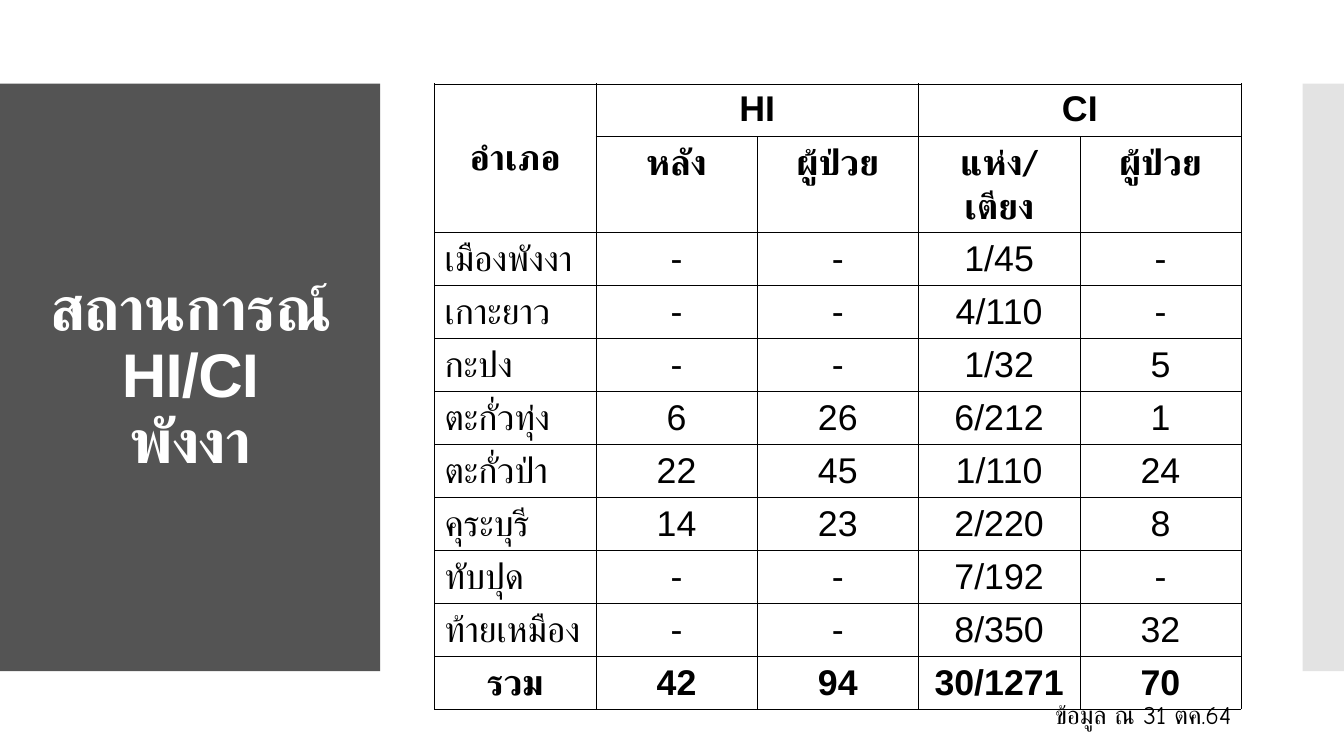
from lxml import etree
from pptx import Presentation
from pptx.dml.color import RGBColor
from pptx.enum import shapes, text
from pptx.oxml import ns
from pptx.util import Inches, Pt

# Content
TITLE = "สถานการณ์ HI/CI\vพังงา"
NOTE = "ข้อมูล ณ 31 ตค.64"
HEADS = [
    ("อำเภอ", "HI", "", "CI", ""),
    ("", "หลัง", "ผู้ป่วย", "แห่ง/เตียง", "ผู้ป่วย"),
]
AREAS = [
    ("เมืองพังงา", "-", "-", "1/45", "-"),
    ("เกาะยาว", "-", "-", "4/110", "-"),
    ("กะปง", "-", "-", "1/32", "5"),
    ("ตะกั่วทุ่ง", "6", "26", "6/212", "1"),
    ("ตะกั่วป่า", "22", "45", "1/110", "24"),
    ("คุระบุรี", "14", "23", "2/220", "8"),
    ("ทับปุด", "-", "-", "7/192", "-"),
    ("ท้ายเหมือง", "-", "-", "8/350", "32"),
]
TOTAL = ("รวม", "42", "94", "30/1271", "70")
MERGES = [((0, 0), (1, 0)), ((0, 1), (0, 2)), ((0, 3), (0, 4))]

THEME = {
    "panel": "545454", "strip": "C8C8C8", "ink": "000000", "white": "FFFFFF",
    "latin": "Arial", "thai": "Calibri", "note": "Comic Neue",
    "title_pt": 44, "cell_pt": 25.5, "note_pt": 18, "line_pt": 0.25,
}
LEFT, MID, RIGHT = text.PP_ALIGN.LEFT, text.PP_ALIGN.CENTER, text.PP_ALIGN.RIGHT
TOP, CENTER = text.MSO_ANCHOR.TOP, text.MSO_ANCHOR.MIDDLE


def box(*at):
    return [Inches(n) for n in at]


def color(name):
    return RGBColor.from_string(THEME[name])


def panel(slide, at, fill):
    shape = slide.shapes.add_shape(shapes.MSO_SHAPE.RECTANGLE, *box(*at))
    shape.shadow.inherit = False
    shape.fill.solid()
    shape.fill.fore_color.rgb = color(fill)
    shape.line.fill.background()
    return shape


def write(frame, words, face, size, ink="ink", bold=False, align=MID):
    frame.word_wrap = True
    para = frame.paragraphs[0]
    para.text = words
    para.alignment = align
    for run in para.runs:
        look = {"name": THEME[face], "size": Pt(THEME[size]), "bold": bold}
        for key, value in look.items():
            setattr(run.font, key, value)
        run.font.color.rgb = color(ink)
        # Thai letters take the complex-script face
        tag = etree.SubElement(run.font._element, ns.qn("a:cs"))
        tag.set("typeface", THEME[face])
    return para


def border(cell):
    props = cell._tc.get_or_add_tcPr()
    for i, side in enumerate(("lnL", "lnR", "lnT", "lnB")):
        line = etree.Element(ns.qn("a:" + side), w=str(Pt(THEME["line_pt"])))
        fill = etree.SubElement(line, ns.qn("a:solidFill"))
        etree.SubElement(fill, ns.qn("a:srgbClr"), val=THEME["ink"])
        props.insert(i, line)


def main():
    deck = Presentation()
    deck.slide_width, deck.slide_height = box(13.33, 7.5)
    slide = deck.slides.add_slide(deck.slide_layouts[6])

    # Side panels
    panel(slide, (0, 0.83, 3.77, 5.83), "panel")
    strip = panel(slide, (12.92, 0.83, 0.41, 5.83), "strip")
    tint = strip._element.spPr.find(".//" + ns.qn("a:srgbClr"))
    etree.SubElement(tint, ns.qn("a:alpha"), val="50000")

    # Title
    frame = slide.shapes.add_textbox(*box(0.28, 1.23, 3.22, 5.03)).text_frame
    frame.vertical_anchor = CENTER
    para = write(frame, TITLE, "latin", "title_pt", "white", True)
    para.line_spacing = 0.9
    for run in para.runs:
        run.font._element.set("spc", "-60")

    # Table
    rows = [*HEADS, *AREAS, TOTAL]
    last = len(rows) - 1
    grid = slide.shapes.add_table(
        len(rows), len(TOTAL), *box(4.31, 0.83, 8, 5.78)).table
    grid.first_row = grid.horz_banding = False
    for row in grid.rows:
        row.height = Inches(5.78 / len(rows))
    for start, end in MERGES:
        grid.cell(*start).merge(grid.cell(*end))
    for r, row in enumerate(rows):
        for c, words in enumerate(row):
            cell = grid.cell(r, c)
            head = r < len(HEADS)
            face = "thai" if c == 0 or r == 1 else "latin"
            align = LEFT if c == 0 and not head and r < last else MID
            cell.fill.background()
            border(cell)
            body = c > 0 and not head
            cell.vertical_anchor = CENTER if body or r == c == 0 else TOP
            if words:
                write(cell.text_frame, words, face, "cell_pt",
                      bold=head or r == last, align=align)

    # Date note
    frame = slide.shapes.add_textbox(*box(8.06, 6.89, 4.25, 0.4)).text_frame
    write(frame, NOTE, "note", "note_pt", align=RIGHT)

    deck.save("out.pptx")


if __name__ == "__main__":
    main()
